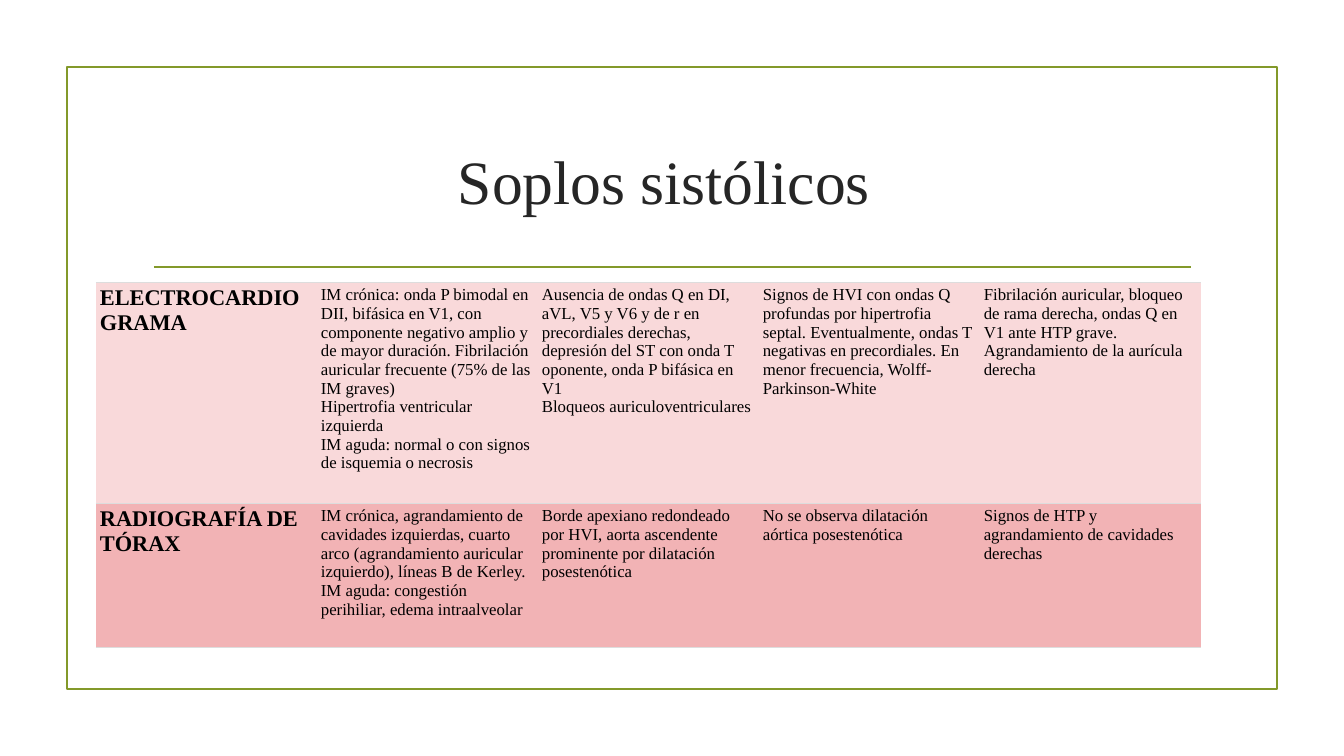
from copy import deepcopy

from lxml.etree import SubElement
from pptx import Presentation
from pptx.dml.color import RGBColor
from pptx.enum.shapes import MSO_CONNECTOR, MSO_SHAPE
from pptx.enum.text import MSO_ANCHOR, PP_ALIGN
from pptx.oxml.ns import qn
from pptx.util import Pt

EMU_PER_PX = 914400 / 100.8
FONT = "Times New Roman"
OLIVE = "83992A"
RULE_GREY = "DDDDDD"
COLUMN_WIDTH = 221
CELL_MARGIN = 4

# Each row: height, fill, heading and findings
ROWS = [
    (221, "F9D9DA", "ELECTROCARDIO\nGRAMA", [
        "IM crónica: onda P bimodal en DII, bifásica en V1, con componente "
        "negativo amplio y de mayor duración. Fibrilación auricular frecuente "
        "(75% de las IM graves)\nHipertrofia ventricular izquierda\n"
        "IM aguda: normal o con signos de isquemia o necrosis",
        "Ausencia de ondas Q en DI, aVL, V5 y V6 y de r en precordiales "
        "derechas, depresión del ST con onda T oponente, onda P bifásica en V1\n"
        "Bloqueos auriculoventriculares",
        "Signos de HVI con ondas Q profundas por hipertrofia septal. "
        "Eventualmente, ondas T negativas en precordiales. En menor "
        "frecuencia, Wolff-Parkinson-White",
        "Fibrilación auricular, bloqueo de rama derecha, ondas Q en V1 ante "
        "HTP grave. Agrandamiento de la aurícula derecha",
    ]),
    (145, "F2B3B5", "RADIOGRAFÍA DE TÓRAX", [
        "IM crónica, agrandamiento de cavidades izquierdas, cuarto arco "
        "(agrandamiento auricular izquierdo), líneas B de Kerley.\n"
        "IM aguda: congestión perihiliar, edema intraalveolar",
        "Borde apexiano redondeado por HVI, aorta ascendente prominente por "
        "dilatación posestenótica",
        "No se observa dilatación aórtica posestenótica",
        "Signos de HTP y agrandamiento de cavidades derechas",
    ]),
]


def px(length):
    return round(length * EMU_PER_PX)


def color(hex_code):
    return RGBColor.from_string(hex_code)


def write_text(frame, text, size, hex_code="000000", bold=False,
               align=PP_ALIGN.LEFT, anchor=MSO_ANCHOR.TOP):
    frame.word_wrap = True
    frame.vertical_anchor = anchor
    para = frame.paragraphs[0]
    para.alignment = align
    for number, line in enumerate(text.split("\n")):
        if number:
            para.add_line_break()
        span = para.add_run()
        span.text = line
        span.font.name = FONT
        span.font.size = Pt(size)
        span.font.bold = bold
        span.font.color.rgb = color(hex_code)
    # Line breaks take the format of the text around them
    for line_break in para._p.findall(qn("a:br")):
        line_break.append(deepcopy(span._r.rPr))


def add_frame(page, left, top, width, height):
    frame = page.shapes.add_shape(
        MSO_SHAPE.RECTANGLE, px(left), px(top), px(width), px(height))
    frame.shadow.inherit = False
    frame.fill.background()
    frame.line.color.rgb = color(OLIVE)
    frame.line.width = Pt(1.25)


def add_rule(page, left, right, top):
    rule = page.shapes.add_connector(
        MSO_CONNECTOR.STRAIGHT, px(left), px(top), px(right), px(top))
    rule.line.color.rgb = color(OLIVE)
    rule.line.width = Pt(1.25)
    SubElement(rule._element.spPr, qn("a:effectLst"))


def add_title(page, text, left, top, width, height):
    box = page.shapes.add_textbox(px(left), px(top), px(width), px(height))
    write_text(box.text_frame, text, 44, hex_code="262626",
               align=PP_ALIGN.CENTER, anchor=MSO_ANCHOR.MIDDLE)


def set_borders(cell):
    properties = cell._tc.get_or_add_tcPr()
    for side in ("lnL", "lnR"):
        SubElement(SubElement(properties, qn(f"a:{side}"), w="0"), qn("a:noFill"))
    for side in ("lnT", "lnB"):
        border = SubElement(properties, qn(f"a:{side}"), w=str(Pt(0.75)))
        fill = SubElement(border, qn("a:solidFill"))
        SubElement(fill, qn("a:srgbClr"), val=RULE_GREY)


def fill_cell(cell, text, fill, **text_format):
    cell.margin_left = cell.margin_right = px(CELL_MARGIN)
    cell.margin_top = cell.margin_bottom = px(CELL_MARGIN)
    set_borders(cell)
    cell.fill.solid()
    cell.fill.fore_color.rgb = color(fill)
    write_text(cell.text_frame, text, **text_format)


def add_findings_table(page, left, top):
    column_count = 1 + len(ROWS[0][3])
    height = sum(row[0] for row in ROWS)
    table = page.shapes.add_table(
        len(ROWS), column_count, px(left), px(top),
        px(COLUMN_WIDTH * column_count), px(height)).table
    table.first_row = False
    table.horz_banding = False
    for column in table.columns:
        column.width = px(COLUMN_WIDTH)
    for row_number, (row_height, fill, heading, findings) in enumerate(ROWS):
        table.rows[row_number].height = px(row_height)
        fill_cell(table.cell(row_number, 0), heading, fill, size=16, bold=True)
        for column_number, finding in enumerate(findings, start=1):
            fill_cell(table.cell(row_number, column_number), finding, fill, size=12)


def main():
    deck = Presentation()
    deck.slide_width, deck.slide_height = px(1344), px(756)
    page = deck.slides.add_slide(deck.slide_layouts[6])

    # Page decoration
    add_frame(page, 67, 67, 1210, 622)
    add_rule(page, 154, 1191, 267)

    # Content
    add_title(page, "Soplos sistólicos ", 143, 108, 1058, 144)
    add_findings_table(page, 96, 282)

    deck.save("out.pptx")


if __name__ == "__main__":
    main()
